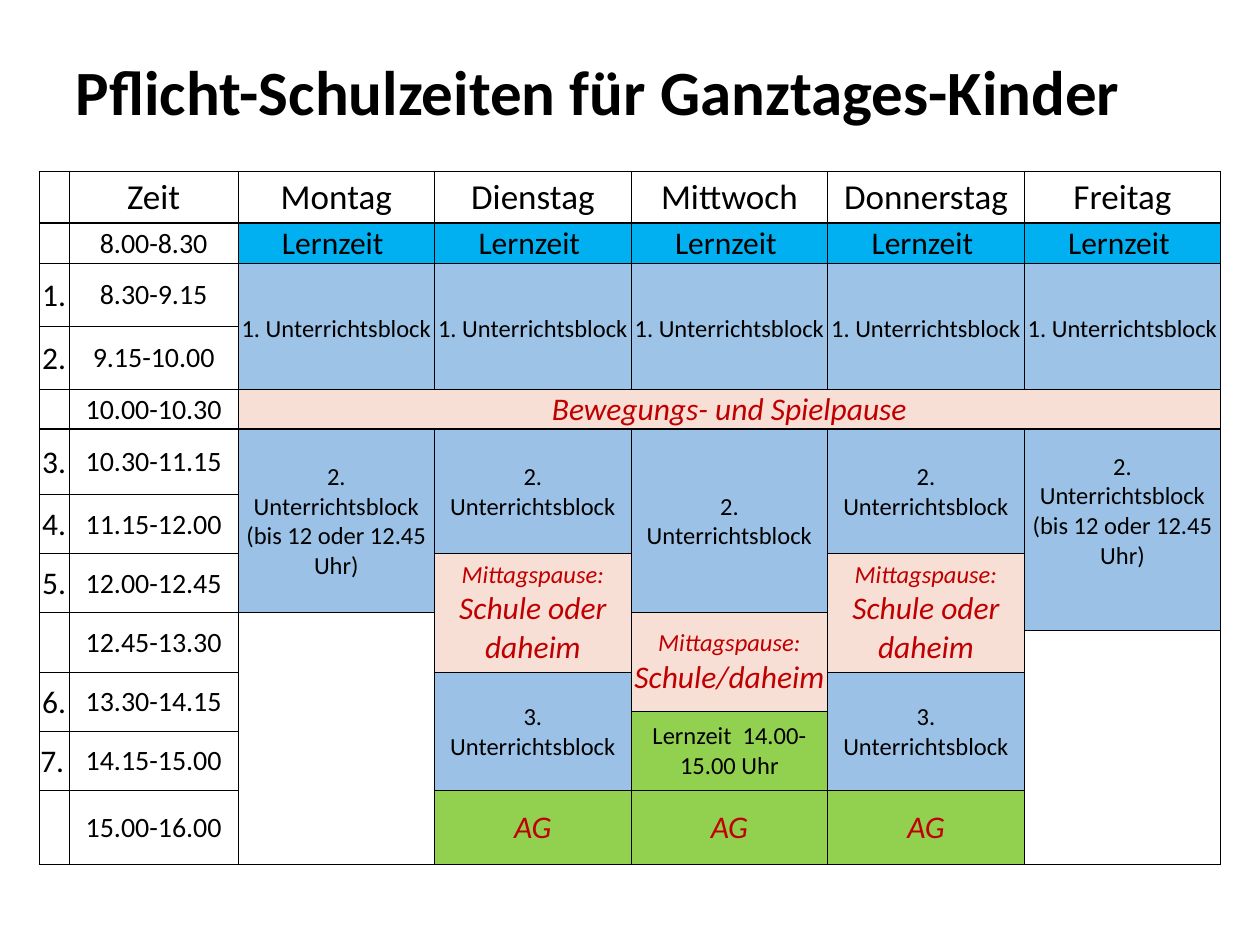
from pptx import Presentation
from pptx.dml.color import RGBColor
from pptx.enum.text import MSO_ANCHOR as Anchor, PP_ALIGN as Align
from pptx.oxml.xmlchemy import OxmlElement
from pptx.util import Inches, Pt

FONT = "Calibri"
BLACK, WHITE, RED = "000000", "FFFFFF", "C00000"
CYAN, BLUE, SOFT_BLUE, ROSE, GREEN = "00B0F0", "9DC3E6", "9BC2E6", "F7DFD5", "92D050"

TITLE = "Pflicht-Schulzeiten für Ganztages-Kinder"
HEADERS = ["Zeit", "Montag", "Dienstag", "Mittwoch", "Donnerstag", "Freitag"]
COLUMN_WIDTHS = [0.24, 1.34] + [1.56] * 5
ROW_HEIGHTS = [0.41, 0.32, 0.5, 0.5, 0.31, 0.52, 0.47, 0.47, 0.14, 0.33, 0.31, 0.16, 0.47, 0.59]
THICK_ROWS = {0, 1, 4, 5}
MON, TUE, WED, THU, FRI = DAYS = range(2, 7)

TIMES = [
    (1, 1, "", "8.00-8.30"),
    (2, 1, "1.", "8.30-9.15"),
    (3, 1, "2.", "9.15-10.00"),
    (4, 1, "", "10.00-10.30"),
    (5, 1, "3.", "10.30-11.15"),
    (6, 1, "4.", "11.15-12.00"),
    (7, 1, "5.", "12.00-12.45"),
    (8, 2, "", "12.45-13.30"),
    (10, 2, "6.", "13.30-14.15"),
    (12, 1, "7.", "14.15-15.00"),
    (13, 1, "", "15.00-16.00"),
]

LEARNING = [[("Lernzeit ", 18)]]
FIRST_BLOCK = [[("1. Unterrichtsblock", 14), (" ", 18)]]
SECOND_BLOCK = [[("2.", 14)], [("Unterrichtsblock", 14)]]
LONG_BLOCK = [[("2.", 14)], [("Unterrichtsblock (bis 12 oder 12.45 Uhr)", 14)]]
THIRD_BLOCK = [[("3.", 14)], [("Unterrichtsblock", 14)]]
LUNCH = [[("Mittagspause:", 14)], [("Schule oder daheim", 18)]]
SHORT_LUNCH = [[("Mittagspause:", 14)], [("Schule/daheim", 18)]]
AFTERNOON = [[("Lernzeit  14.00- 15.00 Uhr", 14)]]
CLUB = [[("AG", 18)]]
BREAK = [[("Bewegungs- und Spielpause", 18)]]

LESSONS = [
    (DAYS, 1, 1, 1, CYAN, BLACK, LEARNING),
    (DAYS, 2, 2, 1, BLUE, BLACK, FIRST_BLOCK),
    ([MON], 4, 1, 5, ROSE, RED, BREAK),
    ([MON], 5, 3, 1, SOFT_BLUE, BLACK, LONG_BLOCK),
    ([TUE, THU], 5, 2, 1, SOFT_BLUE, BLACK, SECOND_BLOCK),
    ([WED], 5, 3, 1, SOFT_BLUE, BLACK, SECOND_BLOCK),
    ([FRI], 5, 4, 1, SOFT_BLUE, BLACK, LONG_BLOCK),
    ([TUE, THU], 7, 3, 1, ROSE, RED, LUNCH),
    ([WED], 8, 3, 1, ROSE, RED, SHORT_LUNCH),
    ([MON], 8, 6, 1, WHITE, BLACK, []),
    ([FRI], 9, 5, 1, WHITE, BLACK, []),
    ([TUE, THU], 10, 3, 1, SOFT_BLUE, BLACK, THIRD_BLOCK),
    ([WED], 11, 2, 1, GREEN, BLACK, AFTERNOON),
    ([TUE, WED, THU], 13, 1, 1, GREEN, RED, CLUB),
]


def color(value):
    return RGBColor.from_string(value)


def style_font(font, size, ink):
    font.name, font.size = FONT, Pt(size)
    font.color.rgb = color(ink)
    font.italic = ink == RED


def add_border(cell, side, width):
    line = OxmlElement(f"a:ln{side}")
    line.set("w", str(Pt(width)))
    fill = OxmlElement("a:solidFill")
    ink = OxmlElement("a:srgbClr")
    ink.set("val", BLACK)
    fill.append(ink)
    line.append(fill)
    cell._tc.get_or_add_tcPr().append(line)


def is_thick(row, column):
    return row in THICK_ROWS or (row, column) == (9, FRI)


def prepare_cell(cell, row, column):
    cell.margin_left = cell.margin_right = cell.margin_top = Inches(0.01)
    cell.margin_bottom = 0
    cell.vertical_anchor = Anchor.MIDDLE
    add_border(cell, "L", 0.5)
    add_border(cell, "R", 0.5)
    add_border(cell, "T", 1 if is_thick(row, column) else 0.5)
    add_border(cell, "B", 1 if is_thick(row + 1, column) else 0.5)
    cell.fill.solid()
    cell.fill.fore_color.rgb = color(WHITE)


def fill_cell(table, row, column, lines, fill=WHITE, ink=BLACK, rows=1, columns=1):
    cell = table.cell(row, column)
    if rows * columns > 1:
        cell.merge(table.cell(row + rows - 1, column + columns - 1))
    cell.fill.fore_color.rgb = color(fill)
    for index, spans in enumerate(lines):
        frame = cell.text_frame
        para = frame.add_paragraph() if index else frame.paragraphs[0]
        para.alignment = Align.CENTER
        for text, size in spans:
            span = para.add_run()
            span.text = text
            if len(spans) > 1:
                style_font(span.font, size, ink)
        if len(spans) == 1:
            style_font(para.font, spans[0][1], ink)
    return cell


def add_title(page):
    title = page.shapes.title
    title.left, title.top, title.width, title.height = map(Inches, (0.5, 0.13, 9, 1.25))
    title.text_frame.text = TITLE
    title.text_frame.vertical_anchor = Anchor.MIDDLE
    para = title.text_frame.paragraphs[0]
    para.alignment, para.line_spacing = Align.LEFT, 0.9
    style_font(para.font, 36, BLACK)
    para.font.bold = True


def add_timetable(page):
    frame = page.shapes.add_table(
        len(ROW_HEIGHTS), len(COLUMN_WIDTHS), Inches(0.31), Inches(1.36),
        Inches(sum(COLUMN_WIDTHS)), Inches(sum(ROW_HEIGHTS)))
    table = frame.table
    table.first_row = table.horz_banding = False
    for column, width in zip(table.columns, COLUMN_WIDTHS):
        column.width = Inches(width)
    for row, height in zip(table.rows, ROW_HEIGHTS):
        row.height = Inches(height)
    for row in range(len(ROW_HEIGHTS)):
        for column in range(len(COLUMN_WIDTHS)):
            prepare_cell(table.cell(row, column), row, column)

    for column, header in enumerate(HEADERS, 1):
        fill_cell(table, 0, column, [[(header, 20)]])
    for row, rows, number, time in TIMES:
        fill_cell(table, row, 0, [[(number, 18)]] if number else [], rows=rows)
        fill_cell(table, row, 1, [[(time, 16)]], rows=rows)
    for days, row, rows, columns, fill, ink, lines in LESSONS:
        for day in days:
            fill_cell(table, row, day, lines, fill, ink, rows, columns)
    table.cell(5, FRI).margin_bottom = Inches(0.3)
    table.cell(12, 0).text_frame.paragraphs[0].alignment = Align.LEFT


def main():
    deck = Presentation()
    deck.slide_width, deck.slide_height = Inches(10), Inches(7.5)
    page = deck.slides.add_slide(deck.slide_layouts[5])
    add_title(page)
    add_timetable(page)
    deck.save("out.pptx")


if __name__ == "__main__":
    main()
